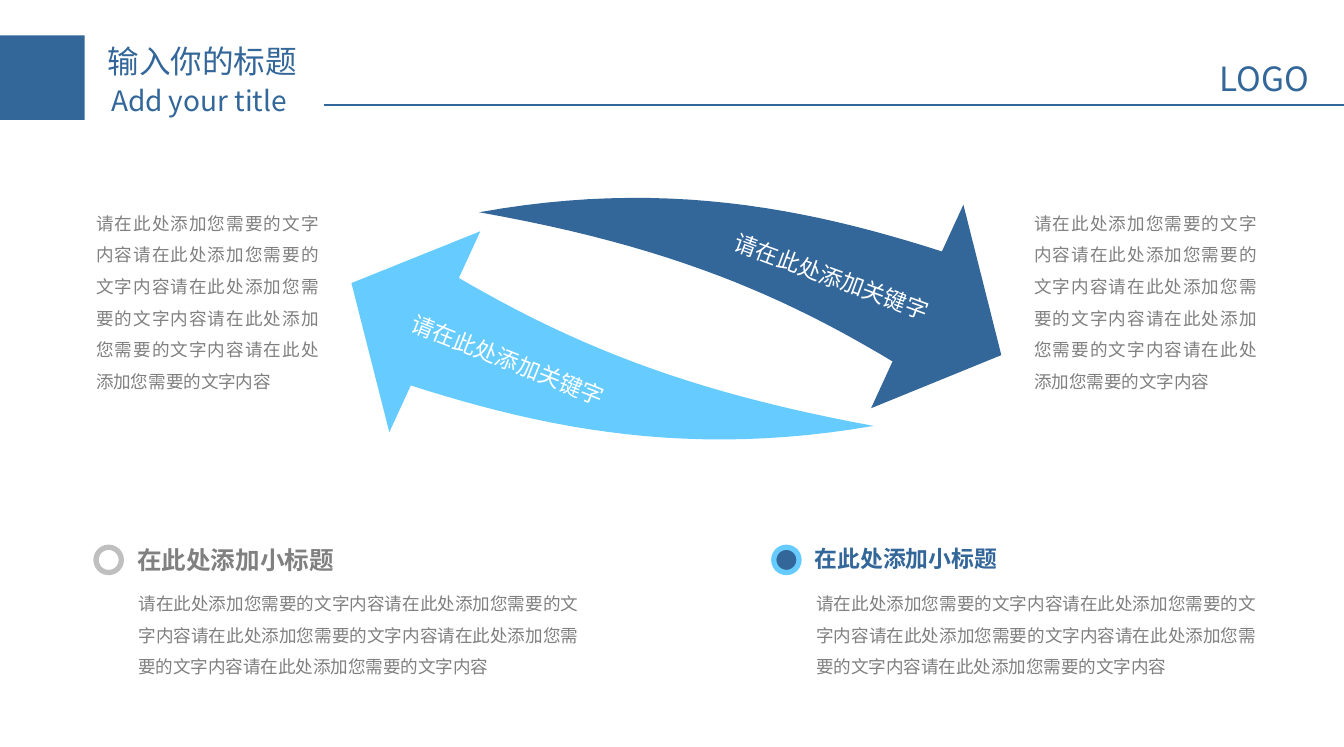
from lxml import etree
from pptx import Presentation, util as u
from pptx.dml.color import RGBColor
from pptx.enum import shapes, text
from pptx.oxml.ns import qn

# Grid: square cells of a tenth of an inch
CELL = u.Inches(0.1)
COLUMNS, ROWS = 106.3, 59.1

NAVY = RGBColor(0x33, 0x66, 0x99)
SKY = RGBColor(0x66, 0xCC, 0xFF)
GRAY = RGBColor(0x80, 0x80, 0x80)
SILVER = RGBColor(0xBF, 0xBF, 0xBF)
WHITE = RGBColor(0xFF, 0xFF, 0xFF)

NOTO = "Noto Sans CJK SC"
BODY = "请在此处添加您需要的文字内容" * 5
KEYWORD = "请在此处添加关键字"
HEADING = "在此处添加小标题"
LEFT, JUSTIFY, RIGHT = (text.PP_ALIGN.LEFT, text.PP_ALIGN.JUSTIFY,
                        text.PP_ALIGN.RIGHT)

# Arrow outlines in cells: tail, curve to the head, head corners, curve back
NAVY_ARROW = [(37.9, 16.8), [(52.3, 14.2), (63.6, 16.4), (74.5, 19.9)],
              (76.2, 16.2), (79.2, 28.1), (68.9, 32.3), (70.6, 28.6),
              [(62.1, 23.5), (53.2, 19.5), (37.9, 16.8)]]
SKY_ARROW = [(69.1, 33.7), [(54.7, 36.2), (43.4, 34), (32.5, 30.5)],
             (30.8, 34.2), (27.8, 22.4), (38, 18.3), (36.3, 22),
             [(44.9, 27), (53.8, 30.9), (69.1, 33.7)]]


def cells(*counts):
    return [round(count * CELL) for count in counts]


def format_text(shape, words, size, color, font=NOTO, bold=False,
                align=LEFT, spacing=None, inset=1, wrap=True):
    frame = shape.text_frame
    frame.text = words
    frame.word_wrap = wrap
    frame.auto_size = text.MSO_AUTO_SIZE.NONE
    frame.vertical_anchor = text.MSO_ANCHOR.TOP
    frame.margin_left = frame.margin_right = round(inset * CELL)
    frame.margin_top = frame.margin_bottom = u.Inches(0.05)
    paragraph = frame.paragraphs[0]
    paragraph.alignment = align
    paragraph.line_spacing = spacing
    for run in paragraph.runs:
        run.font.size = u.Pt(size)
        run.font.name = font
        run.font.bold = bold
        run.font.color.rgb = color
        east_asian = etree.SubElement(run.font._element, qn("a:ea"))
        east_asian.set("typeface", NOTO)


def add_text(slide, box, words, size, color, rotation=0, **style):
    shape = slide.shapes.add_textbox(*cells(*box))
    shape.rotation = rotation
    format_text(shape, words, size, color, **style)


def add_body(slide, box):
    add_text(slide, box, BODY, 10, GRAY, font="Arial", align=JUSTIFY,
             spacing=1.5, inset=0)


def paint(shape, fill, line=None):
    shape.shadow.inherit = False
    shape.fill.solid()
    shape.fill.fore_color.rgb = fill
    if line is None:
        shape.line.fill.background()
    else:
        shape.line.color.rgb = line
        shape.line.width = u.Pt(3)


def curve(start, controls, steps=24):
    """Points along a cubic Bezier curve."""
    points = [start, *controls]
    for step in range(1, steps + 1):
        t = step / steps
        weights = ((1 - t) ** 3, 3 * t * (1 - t) ** 2, 3 * t * t * (1 - t), t ** 3)
        yield tuple(sum(weight * point[axis] for weight, point in zip(weights, points))
                    for axis in (0, 1))


def add_arrow(slide, outline, fill):
    points = [outline[0]]
    for part in outline[1:]:
        points.extend(curve(points[-1], part) if isinstance(part, list) else [part])
    points = [cells(*point) for point in points]
    builder = slide.shapes.build_freeform(*points[0])
    builder.add_line_segments(points[1:], close=True)
    paint(builder.convert_to_shape(), fill)


def add_header(slide):
    block = slide.shapes.add_shape(shapes.MSO_SHAPE.RECTANGLE,
                                   *cells(0, 2.8, 6.7, 6.7))
    paint(block, NAVY)
    title = slide.shapes.title
    title.left, title.top, title.width, title.height = cells(7.5, 2.8, 17.3, 4)
    format_text(title, "输入你的标题", 18, NAVY)
    add_text(slide, (7.8, 6.1, 17.3, 3.7), "Add your title", 16, NAVY)
    rule = slide.shapes.add_connector(shapes.MSO_CONNECTOR.STRAIGHT,
                                      *cells(25.6, 8.3, COLUMNS, 8.3))
    rule.line.color.rgb = NAVY
    rule.line.width = u.Pt(0.75)
    etree.SubElement(rule._element.spPr, qn("a:effectLst"))
    add_text(slide, (95.5, 4.1, 9.6, 4.2), "LOGO", 19, NAVY, wrap=False)


def add_section(slide, left, size, color, fill, ring):
    marker = slide.shapes.add_shape(shapes.MSO_SHAPE.OVAL, *cells(left, 43.3, 2, 2))
    paint(marker, fill, ring)
    add_text(slide, (left + 2.45, 42.6, 35.3, 3.1), HEADING, size, color,
             bold=True, inset=0.8)
    add_body(slide, (left + 3.35, 45.6, 34.8, 8.3))


def main():
    presentation = Presentation()
    presentation.slide_width, presentation.slide_height = cells(COLUMNS, ROWS)
    slide = presentation.slides.add_slide(presentation.slide_layouts[5])
    add_header(slide)

    # Arrows with keywords
    keyword = dict(font="Calibri", inset=0, wrap=False)
    add_arrow(slide, NAVY_ARROW, NAVY)
    add_text(slide, (57.7, 20.3, 16.2, 3), KEYWORD, 13, WHITE, 20.2,
             align=RIGHT, **keyword)
    add_arrow(slide, SKY_ARROW, SKY)
    add_text(slide, (32.1, 26.9, 16.2, 3), KEYWORD, 13, WHITE, 21.8, **keyword)

    # Side texts
    for left in (7.6, 81.8):
        add_body(slide, (left, 15.5, 17.6, 15.8))

    # Lower sections
    add_section(slide, 7.6, 14, GRAY, WHITE, SILVER)
    add_section(slide, 61.2, 13, NAVY, NAVY, SKY)

    presentation.save("out.pptx")


if __name__ == "__main__":
    main()
